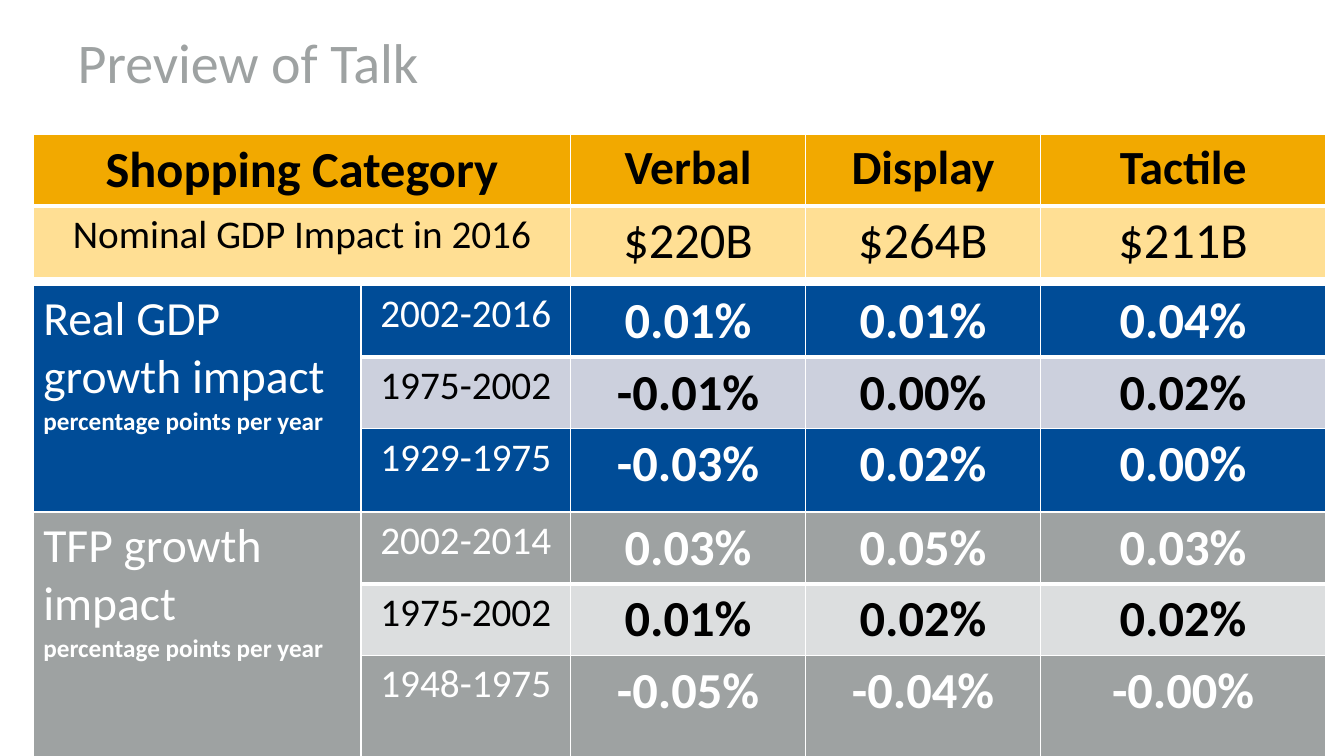
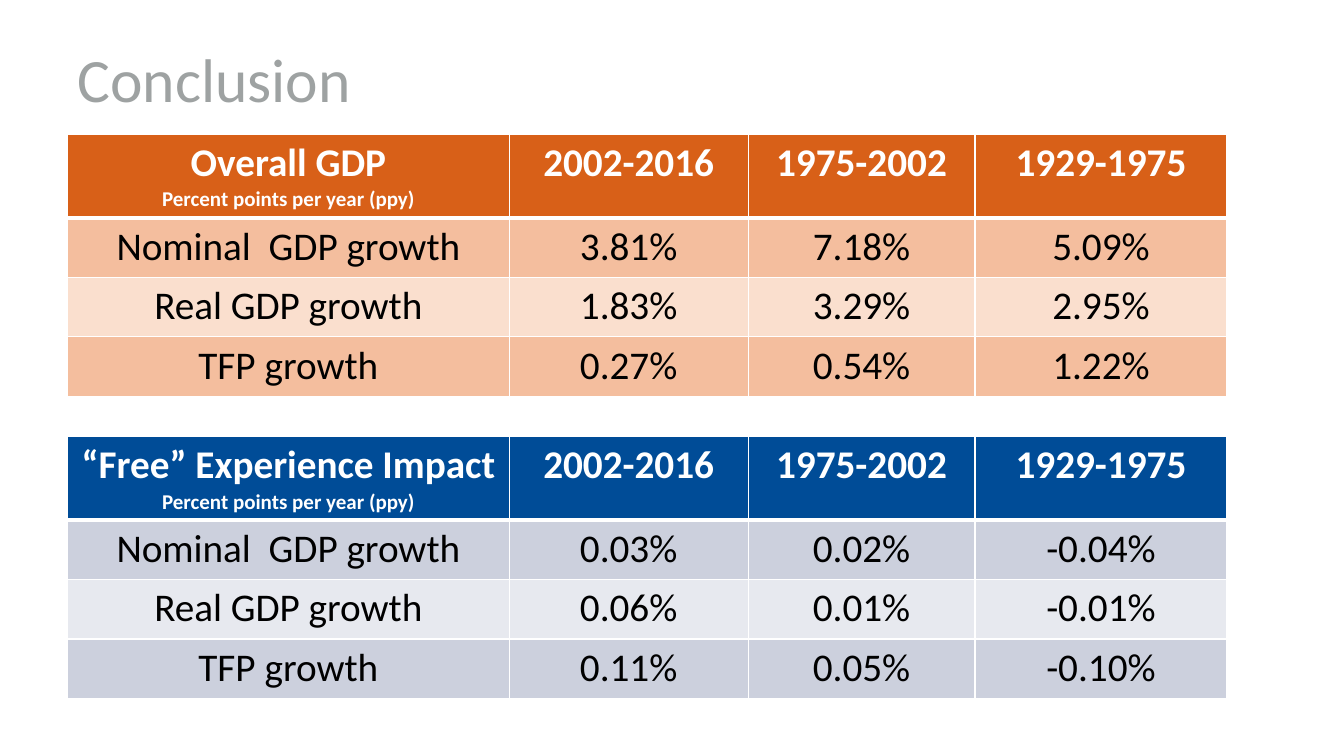
from dataclasses import dataclass
from typing import NamedTuple

from lxml import etree
from pptx import Presentation
from pptx.dml.color import RGBColor
from pptx.enum.text import MSO_ANCHOR, MSO_AUTO_SIZE, PP_ALIGN
from pptx.oxml.ns import qn
from pptx.util import Inches, Pt

FONT = "Calibri"
COLORS = {
    "white": "FFFFFF", "black": "000000",
    "gold": "F2A900", "gold_light": "FFDF94",
    "blue": "004C97", "blue_light": "CCD0DD", "blue_pale": "E7E9EF",
    "gray": "9EA2A2", "gray_light": "DCDEDF",
    "orange": "D86018", "orange_light": "F4BE9E", "orange_pale": "FADFCE",
}
TITLE_ONLY = 5


class TextStyle(NamedTuple):
    size: float
    bold: bool = False


@dataclass
class Row:
    height: float
    fill: str
    ink: str
    label: TextStyle
    body: TextStyle
    texts: tuple[str, ...]


@dataclass
class Grid:
    left: float
    top: float
    cols: tuple[float, ...]
    rows: list[Row]
    note: TextStyle = TextStyle(18, True)
    side_head: str = ""
    side_style: TextStyle = TextStyle(34)


def rgb(name: str) -> RGBColor:
    return RGBColor.from_string(COLORS[name])


def add_run(p, text: str, style: TextStyle, ink: str) -> None:
    r = p.add_run()
    r.text = text
    formats = {"name": FONT, "size": Pt(style.size), "bold": style.bold}
    for key, value in formats.items():
        setattr(r.font, key, value)
    r.font.color.rgb = rgb(ink)


def set_borders(cell, bottom: float) -> None:
    """Put white lines round a cell, before its fill in the XML order."""
    tc_pr = cell._tc.get_or_add_tcPr()
    for i, side in enumerate(("lnL", "lnR", "lnT", "lnB")):
        width = Pt(bottom if side == "lnB" else 1)
        ln = etree.Element(qn(f"a:{side}"), w=str(width))
        fill = etree.SubElement(ln, qn("a:solidFill"))
        etree.SubElement(fill, qn("a:srgbClr"), val=COLORS["white"])
        tc_pr.insert(i, ln)


def write_cell(cell, text: str, style: TextStyle, note: TextStyle, ink: str,
               align: PP_ALIGN = PP_ALIGN.CENTER) -> None:
    """Write the first line in the main style and any further one as a note."""
    tf = cell.text_frame
    for i, line in enumerate(text.split("\n")):
        p = tf.add_paragraph() if i else tf.paragraphs[0]
        p.alignment = align
        add_run(p, line, note if i else style, ink)


def add_grid(s, grid: Grid) -> None:
    first = 1 if grid.side_head else 0
    height = sum(row.height for row in grid.rows)
    table = s.shapes.add_table(
        len(grid.rows), len(grid.cols), Inches(grid.left), Inches(grid.top),
        Inches(sum(grid.cols)), Inches(height)).table
    table.first_row = table.horz_banding = False
    for column, width in zip(table.columns, grid.cols):
        column.width = Inches(width)
    for i, row in enumerate(grid.rows):
        table.rows[i].height = Inches(row.height)
        for j in range(len(grid.cols)):
            cell = table.cell(i, j)
            cell.fill.solid()
            cell.fill.fore_color.rgb = rgb(row.fill)
            set_borders(cell, 1 if i else 3)
        for j, text in enumerate(row.texts):
            style = row.body if j else row.label
            write_cell(table.cell(i, j + first), text, style, grid.note, row.ink)
    if grid.side_head:
        head = table.cell(0, 0)
        head.merge(table.cell(len(grid.rows) - 1, 0))
        write_cell(head, grid.side_head, grid.side_style, grid.note,
                   grid.rows[0].ink, PP_ALIGN.LEFT)


def add_titled_slide(prs, title: str, top: float, size: float):
    s = prs.slides.add_slide(prs.slide_layouts[TITLE_ONLY])
    sp = s.shapes.title
    box = {"left": 0.67, "top": top, "width": 10, "height": 1}
    for key, value in box.items():
        setattr(sp, key, Inches(value))
    tf = sp.text_frame
    formats = {"margin_left": Inches(0.1), "margin_right": Inches(0.1),
               "margin_top": Inches(0.05), "margin_bottom": 0,
               "vertical_anchor": MSO_ANCHOR.MIDDLE, "word_wrap": True,
               "auto_size": MSO_AUTO_SIZE.NONE}
    for key, value in formats.items():
        setattr(tf, key, value)
    p = tf.paragraphs[0]
    p.alignment = PP_ALIGN.LEFT
    add_run(p, title, TextStyle(size), "gray")
    return s


def shopping_grid() -> Grid:
    return Grid(0.33, 1.33, (5.33, 2.33, 2.33, 2.83), [
        Row(0.7, "gold", "black", TextStyle(36, True), TextStyle(34, True),
            ("Shopping Category", "Verbal", "Display", "Tactile")),
        Row(0.7, "gold_light", "black", TextStyle(28), TextStyle(36),
            ("Nominal GDP Impact in 2016", "$220B", "$264B", "$211B")),
    ])


def impact_grid(top: float, head: str, hue: str, last_height: float,
                lines: list[tuple[str, ...]]) -> Grid:
    """Three periods beside a merged heading, the middle one light."""
    looks = ((0.71, hue, "white"), (0.71, f"{hue}_light", "black"),
             (last_height, hue, "white"))
    rows = [Row(*look, TextStyle(28), TextStyle(36, True), texts)
            for look, texts in zip(looks, lines)]
    return Grid(0.33, top, (3.25, 2.08, 2.33, 2.33, 2.83), rows,
                side_head=f"{head}\npercentage points per year")


def growth_grid(top: float, head: str, hue: str,
                values: list[tuple[str, ...]]) -> Grid:
    """A header of periods over three banded growth rows."""
    bold, plain = TextStyle(28, True), TextStyle(28)
    rows = [Row(0.82, hue, "white", bold, bold,
                (f"{head}\nPercent points per year (ppy)",
                 "2002-2016", "1975-2002", "1929-1975"))]
    labels = ("Nominal  GDP growth", "Real GDP growth", "TFP growth")
    for i, (label, line) in enumerate(zip(labels, values)):
        fill = f"{hue}_pale" if i % 2 else f"{hue}_light"
        rows.append(Row(0.59, fill, "black", plain, plain, (label, *line)))
    return Grid(0.67, top, (4.38, 2.37, 2.25, 2.5), rows, TextStyle(15, True))


def main() -> None:
    prs = Presentation()
    prs.slide_width, prs.slide_height = Inches(13.33), Inches(7.5)

    preview = add_titled_slide(prs, "Preview of Talk", 0.08, 40)
    add_grid(preview, shopping_grid())
    add_grid(preview, impact_grid(2.83, "Real GDP growth impact", "blue", 0.83, [
        ("2002-2016", "0.01%", "0.01%", "0.04%"),
        ("1975-2002", "-0.01%", "0.00%", "0.02%"),
        ("1929-1975", "-0.03%", "0.02%", "0.00%"),
    ]))
    add_grid(preview, impact_grid(5.08, "TFP growth impact", "gray", 1, [
        ("2002-2014", "0.03%", "0.05%", "0.03%"),
        ("1975-2002", "0.01%", "0.02%", "0.02%"),
        ("1948-1975", "-0.05%", "-0.04%", "-0.00%"),
    ]))

    conclusion = add_titled_slide(prs, "Conclusion", 0.25, 44)
    add_grid(conclusion, growth_grid(1.33, "Overall GDP", "orange", [
        ("3.81%", "7.18%", "5.09%"),
        ("1.83%", "3.29%", "2.95%"),
        ("0.27%", "0.54%", "1.22%"),
    ]))
    add_grid(conclusion, growth_grid(4.33, "“Free” Experience Impact", "blue", [
        ("0.03%", "0.02%", "-0.04%"),
        ("0.06%", "0.01%", "-0.01%"),
        ("0.11%", "0.05%", "-0.10%"),
    ]))
    prs.save("out.pptx")


if __name__ == "__main__":
    main()
